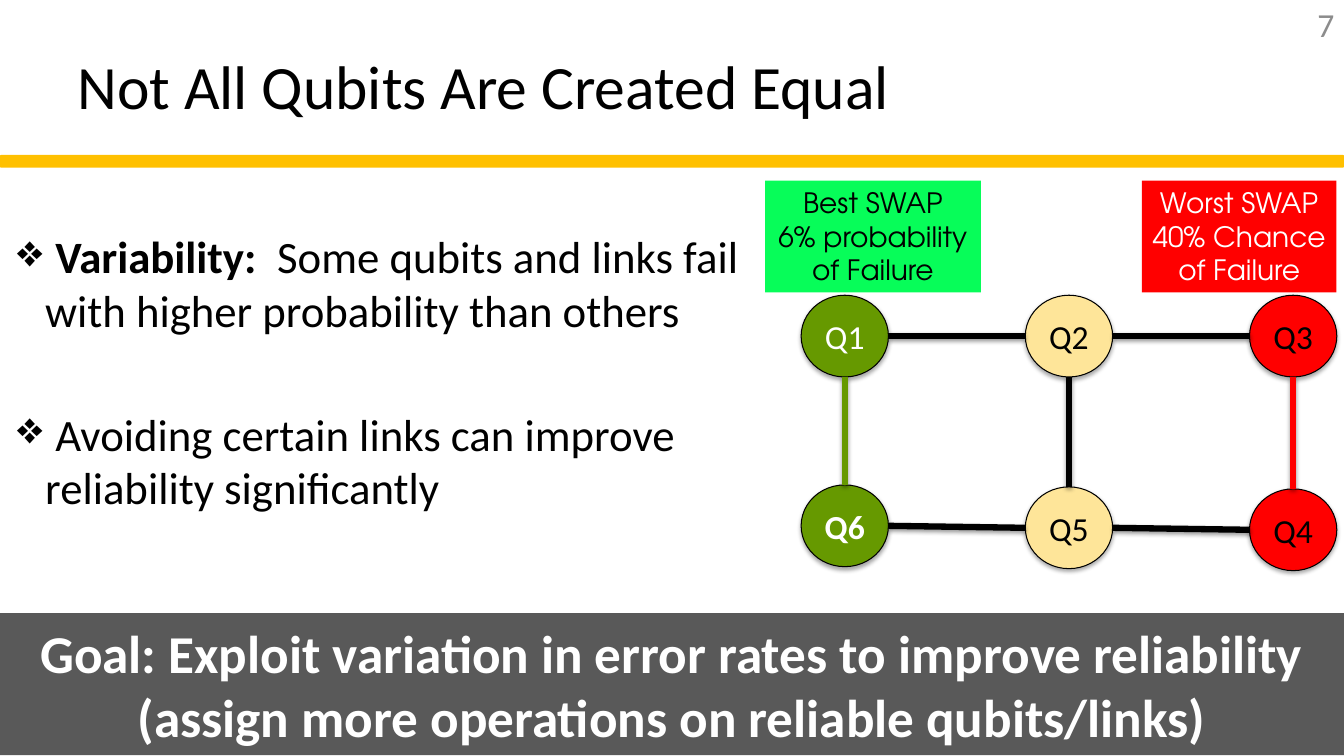
from dataclasses import dataclass

from lxml.etree import SubElement
from pptx import Presentation
from pptx.dml.color import RGBColor
from pptx.enum.shapes import MSO_CONNECTOR as Wire, MSO_SHAPE as Form
from pptx.enum.text import MSO_ANCHOR as Anchor, PP_ALIGN as Align
from pptx.oxml.ns import qn
from pptx.util import Cm, Pt


@dataclass(frozen=True)
class Theme:
    font: str = "Calibri"
    geo: str = "TeX Gyre Adventor"
    black: str = "000000"
    white: str = "FFFFFF"
    gold: str = "FFC000"
    gray: str = "8C8C8C"
    dark: str = "595959"
    green: str = "669900"
    lime: str = "07FD59"
    red: str = "FF0000"
    cream: str = "FEE599"
    title: int = 44
    goal: int = 38
    body: int = 32
    node: int = 24
    tag: int = 20


T = Theme()


def rgb(color):
    return RGBColor.from_string(color)


def style(par, size, color, font=T.font, bold=None):
    """Format every run of a paragraph."""
    for run in par.runs:
        run.font.name = font
        run.font.size = Pt(size)
        run.font.color.rgb = rgb(color)
        run.font.bold = bold


def write(shape, text, size, color, align=Align.CENTER, font=T.font, bold=None):
    """Fill a shape with text, one paragraph per line."""
    frame = shape.text_frame
    frame.text = text
    frame.word_wrap = True
    frame.vertical_anchor = Anchor.MIDDLE
    for par in frame.paragraphs:
        par.alignment = align
        style(par, size, color, font, bold)
    return frame


def block(slide, form, box, fill, line=None, width=0.75):
    """Draw a flat filled shape."""
    shape = slide.shapes.add_shape(form, *map(Cm, box))
    shape.fill.solid()
    shape.fill.fore_color.rgb = rgb(fill)
    if line:
        shape.line.color.rgb = rgb(line)
        shape.line.width = Pt(width)
    else:
        shape.line.fill.background()
    shape.shadow.inherit = False
    return shape


def shade(shape, alpha, drop):
    """Give a shape or connector a soft shadow below it."""
    props = shape.element.spPr
    list_ = props.find(qn("a:effectLst"))
    if list_ is None:
        list_ = SubElement(props, qn("a:effectLst"))
    outer = SubElement(list_, qn("a:outerShdw"), blurRad=str(Pt(3.1)),
                       dist=str(Pt(drop)), dir="5400000", rotWithShape="0")
    color = SubElement(outer, qn("a:srgbClr"), val=T.black)
    SubElement(color, qn("a:alpha"), val=str(alpha * 1000))


def head(slide):
    """Title, page number and the rule below them."""
    block(slide, Form.ROUNDED_RECTANGLE, (0, 3.94, 33.87, 0.25), T.gold, T.gold, 2)
    title = slide.shapes.title
    title.left, title.top, title.width, title.height = map(Cm, (1.7, 0.56, 22.58, 3.18))
    write(title, "Not All Qubits Are Created Equal", T.title, T.black, Align.LEFT)
    page = slide.shapes.add_textbox(*map(Cm, (32.08, 0, 1.8, 1.22)))
    write(page, "7", T.node, T.gray, Align.RIGHT)


def points(slide, items):
    """Bulleted list; each item is a list of (text, bold) parts."""
    frame = slide.shapes.add_textbox(*map(Cm, (0.18, 5.64, 20.27, 8.5))).text_frame
    frame.word_wrap = True
    for i, parts in enumerate(items):
        par = frame.add_paragraph() if i else frame.paragraphs[0]
        props = par._p.get_or_add_pPr()
        props.set("marL", str(Cm(0.71)))
        props.set("indent", str(Cm(-0.71)))
        par.space_before = Pt(50 if i else 0)
        SubElement(props, qn("a:buChar"), char="❖")
        for text, bold in parts:
            par.add_run().text = text
        style(par, T.body, T.black)
        for run, (_, bold) in zip(par.runs, parts):
            run.font.bold = bold


def node(slide, name, spot, fill, color, bold=None):
    """One qubit."""
    disc = block(slide, Form.OVAL, (*spot, 2.2, 2.06), fill, T.black)
    shade(disc, 35, 1.8)
    write(disc, name, T.node, color, bold=bold)
    return disc


def link(slide, one, two, color, down):
    """Join two qubits, side to side or top to bottom."""
    if down:
        ends = (one.left + one.width // 2, one.top + one.height,
                two.left + two.width // 2, two.top)
    else:
        ends = (one.left + one.width, one.top + one.height // 2,
                two.left, two.top + two.height // 2)
    wire = slide.shapes.add_connector(Wire.STRAIGHT, *ends)
    wire.line.color.rgb = rgb(color)
    wire.line.width = Pt(4.5)
    shade(wire, 38, 1.6)


def graph(slide):
    """Two rows of three qubits; the lower row slopes slightly."""
    cols = [("Q1", "Q6", T.green, T.white, T.green),
            ("Q2", "Q5", T.cream, T.black, T.black),
            ("Q3", "Q4", T.red, T.black, T.red)]
    last = None
    for i, (top, low, fill, color, wire) in enumerate(cols):
        left = 20.19 + 5.65 * i
        pair = (node(slide, top, (left, 7.44), fill, color),
                node(slide, low, (left, 12.22 + 0.05 * i), fill, color, low == "Q6"))
        link(slide, *pair, wire, True)
        if last:
            for one, two in zip(last, pair):
                link(slide, one, two, T.black, False)
        last = pair


def tag(slide, text, left, width, fill, color):
    """Label above the graph."""
    shape = block(slide, Form.RECTANGLE, (left, 4.55, width, 2.82), fill)
    frame = write(shape, text, T.tag, color, font=T.geo)
    frame.vertical_anchor = Anchor.TOP
    frame.margin_left = frame.margin_right = Cm(0.2)


def main():
    deck = Presentation()
    deck.slide_width, deck.slide_height = Cm(33.87), Cm(19.05)
    slide = deck.slides.add_slide(deck.slide_layouts[5])

    head(slide)
    graph(slide)
    points(slide, [
        [(" ", None), ("Variability:", True),
         ("  Some qubits and links fail with higher probability than others", False)],
        [(" Avoiding certain links can improve reliability significantly", False)],
    ])
    tag(slide, "Worst SWAP 40% Chance of Failure", 28.78, 4.9, T.red, T.white)
    tag(slide, "Best SWAP\n6% probability of Failure", 19.28, 5.44, T.lime, T.black)

    # Closing banner
    goal = block(slide, Form.RECTANGLE, (0, 15.45, 33.87, 3.58), T.dark)
    write(goal, "Goal: Exploit variation in error rates to improve reliability\n"
          "(assign more operations on reliable qubits/links)", T.goal, T.white, bold=True)

    deck.save("out.pptx")


if __name__ == "__main__":
    main()
